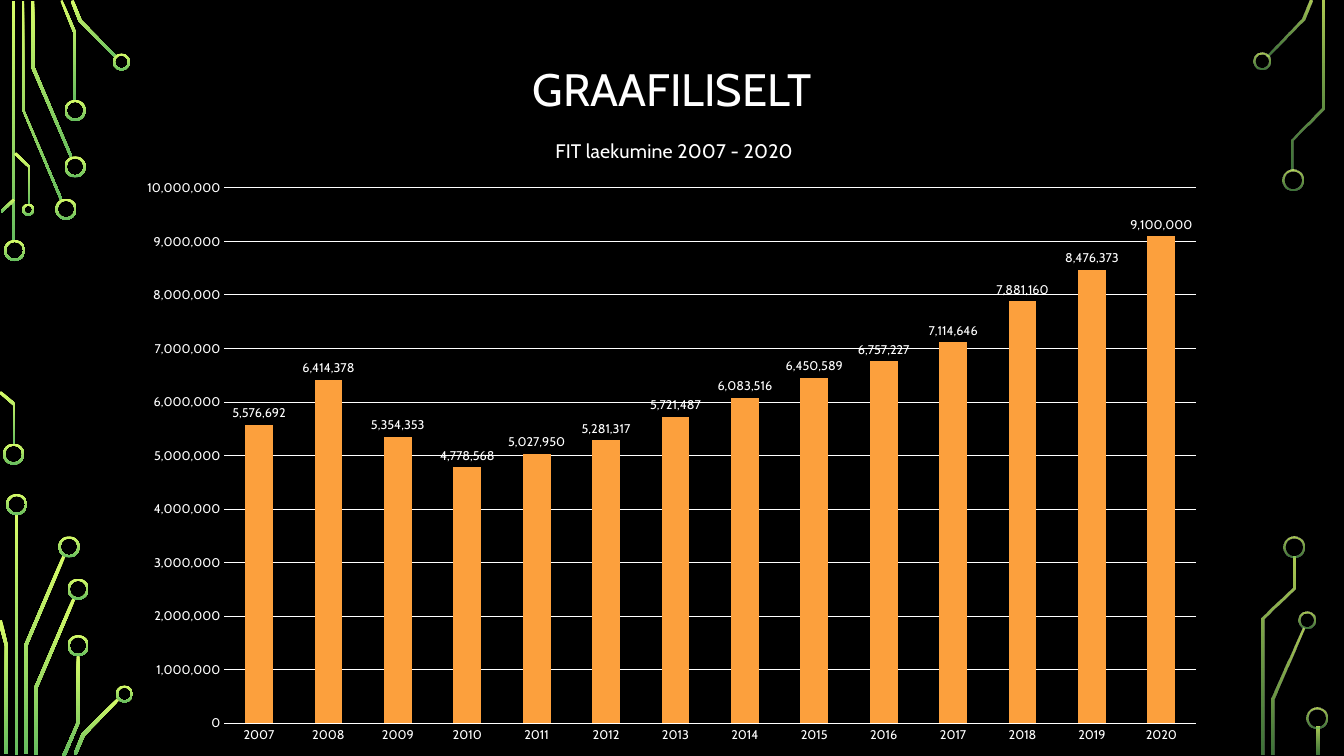
"""Build the slide with a yearly revenue column chart framed by circuit traces."""
from dataclasses import dataclass
from typing import Any

from lxml import etree
from pptx import Presentation
from pptx.chart import data as chart_data
from pptx.dml.color import RGBColor
from pptx.enum import chart as chart_enum, shapes, text
from pptx.oxml import ns
from pptx.util import Inches, Pt

BLACK = RGBColor(0x00, 0x00, 0x00)
WHITE = RGBColor(0xFF, 0xFF, 0xFF)
ORANGE = RGBColor(0xFC, 0xA0, 0x3D)
LIME = RGBColor(0xD8, 0xFC, 0x68)
GREEN = RGBColor(0x66, 0xBD, 0x5F)
FONT = "Cabin"
SOLID = (100, 100)
FADED = (80, 60)
RING_THICKNESS = 0.02
YEARS = [str(year) for year in range(2007, 2021)]
REVENUE = [5576692, 6414378, 5354353, 4778568, 5027950, 5281317, 5721487,
           6083516, 6450589, 6757227, 7114646, 7881160, 8476373, 9100000]


@dataclass(frozen=True)
class Ring:
    left: float
    top: float
    size: float = 0.21
    opacity: tuple[int, int] = SOLID


@dataclass(frozen=True)
class Bar:
    left: float
    top: float
    height: float
    opacity: tuple[int, int] = SOLID
    width: float = 0.03


@dataclass(frozen=True)
class Trace:
    outline: tuple[tuple[float, float], ...]
    opacity: tuple[int, int] = SOLID


RINGS = [
    Ring(0.04, 2.38), Ring(0.03, 4.4), Ring(0.55, 1.97), Ring(0.64, 1.55),
    Ring(0.64, 0.99), Ring(1.12, 0.53, 0.17), Ring(0.22, 2.02, 0.12),
    Ring(0.06, 4.9), Ring(0.58, 5.32), Ring(0.67, 5.74), Ring(0.67, 6.3),
    Ring(1.15, 6.8, 0.17),
    Ring(12.43, 0.52, 0.17, FADED), Ring(12.72, 1.68, opacity=FADED),
    Ring(12.88, 6.07, 0.17, FADED), Ring(12.73, 5.32, opacity=FADED),
    Ring(12.96, 7.02, opacity=FADED),
]
BARS = [Bar(0.12, 0.01, 2.39), Bar(0.15, 5.1, 2.39), Bar(13.06, 7.21, 0.28, FADED)]
TRACES = [
    Trace(((0.6, 1.99), (0.22, 1.09), (0.22, 0.01), (0.24, 0.01), (0.24, 1.09), (0.62, 1.98))),
    Trace(((0.7, 1.57), (0.31, 0.67), (0.31, 0.01), (0.34, 0.01), (0.34, 0.66), (0.72, 1.56))),
    Trace(((0.76, 1), (0.73, 1), (0.73, 0.33), (0.6, 0.01), (0.62, 0), (0.76, 0.33))),
    Trace(((1.15, 0.58), (0.78, 0.21), (0.7, 0.01), (0.73, 0), (0.81, 0.2), (1.16, 0.56))),
    Trace(((0.02, 2.11), (0.01, 2.09), (0.13, 1.97), (0.15, 1.99))),
    Trace(((0.15, 4.41), (0.13, 4.41), (0.13, 4.02), (-0.01, 3.9), (0.01, 3.88), (0.15, 4))),
    Trace(((0.3, 2.03), (0.28, 2.03), (0.28, 1.66), (0.14, 1.53), (0.16, 1.51), (0.3, 1.65))),
    Trace(((0.27, 7.48), (0.24, 7.48), (0.24, 6.4), (0.62, 5.51), (0.65, 5.52), (0.27, 6.41))),
    Trace(((0.08, 7.48), (0.05, 7.48), (0.05, 6.41), (-0.02, 6.16), (0.02, 6.15), (0.08, 6.41))),
    Trace(((0.37, 7.49), (0.34, 7.49), (0.34, 6.82), (0.72, 5.93), (0.75, 5.94), (0.37, 6.83))),
    Trace(((0.65, 7.5), (0.62, 7.49), (0.76, 7.17), (0.76, 6.5), (0.79, 6.5), (0.79, 7.17))),
    Trace(((0.76, 7.49), (0.73, 7.48), (0.81, 7.28), (1.17, 6.92), (1.19, 6.94), (0.84, 7.3))),
    Trace(((12.58, 0.56), (12.56, 0.55), (12.91, 0.19), (12.99, 0), (13.02, 0.01),
           (12.94, 0.2)), FADED),
    Trace(((12.64, 7.49), (12.61, 7.49), (12.61, 6.93), (12.92, 6.23), (12.94, 6.24),
           (12.64, 6.94)), FADED),
    Trace(((12.83, 1.69), (12.81, 1.69), (12.81, 1.38), (13.11, 1.07), (13.11, 0.01),
           (13.14, 0.01), (13.14, 1.08), (12.83, 1.39)), FADED),
    Trace(((12.54, 7.49), (12.51, 7.49), (12.51, 6.13), (12.82, 5.83), (12.82, 5.52),
           (12.85, 5.52), (12.85, 5.84), (12.54, 6.14)), FADED),
]


def apply_format(target: Any, values: dict[str, Any]) -> None:
    """Set every attribute named in values on the target."""
    for name, value in values.items():
        setattr(target, name, value)


def format_font(font: Any, size: float) -> None:
    """Give a font the slide's typeface and white colour."""
    apply_format(font, {"name": FONT, "size": Pt(size), "bold": False})
    font.color.rgb = WHITE


def paint_circuit(part: Any, opacity: tuple[int, int]) -> None:
    """Fill a circuit part with the lime to green gradient."""
    part.shadow.inherit = False
    part.line.fill.background()
    part.fill.gradient()
    part.fill.gradient_angle = 270
    for stop, color in zip(part.fill.gradient_stops, (LIME, GREEN)):
        stop.color.rgb = color
    for color, percent in zip(part.element.iter(ns.qn("a:srgbClr")), opacity):
        if percent < 100:
            etree.SubElement(color, ns.qn("a:alpha"), val=str(percent * 1000))


def draw_ring(slide: Any, ring: Ring) -> None:
    """Draw a solder ring."""
    part = slide.shapes.add_shape(shapes.MSO_SHAPE.DONUT, Inches(ring.left), Inches(ring.top),
                                  Inches(ring.size), Inches(ring.size))
    part.adjustments[0] = RING_THICKNESS / ring.size
    paint_circuit(part, ring.opacity)


def draw_bar(slide: Any, bar: Bar) -> None:
    """Draw a straight vertical trace."""
    part = slide.shapes.add_shape(shapes.MSO_SHAPE.RECTANGLE, Inches(bar.left), Inches(bar.top),
                                  Inches(bar.width), Inches(bar.height))
    paint_circuit(part, bar.opacity)


def draw_trace(slide: Any, trace: Trace) -> None:
    """Draw a bent trace from its outline."""
    start, *rest = [(Inches(x), Inches(y)) for x, y in trace.outline]
    builder = slide.shapes.build_freeform(*start)
    builder.add_line_segments(rest, close=True)
    paint_circuit(builder.convert_to_shape(), trace.opacity)


def place(parent: Any, index: int, values: dict[str, Any]) -> None:
    """Fix the position of a chart part as fractions of the chart."""
    layout = parent.find(ns.qn("c:layout"))
    if layout is None:
        layout = etree.Element(ns.qn("c:layout"))
        parent.insert(index, layout)
    manual = etree.SubElement(layout, ns.qn("c:manualLayout"))
    for name, value in values.items():
        etree.SubElement(manual, ns.qn(f"c:{name}"), val=str(value))


def draw_heading(slide: Any) -> None:
    """Add the slide heading."""
    heading = slide.shapes.add_textbox(Inches(1.25), Inches(0.68), Inches(10.83), Inches(0.47))
    apply_format(heading.text_frame, {"word_wrap": True,
                                      "vertical_anchor": text.MSO_ANCHOR.MIDDLE})
    line = heading.text_frame.paragraphs[0]
    apply_format(line, {"text": "GRAAFILISELT", "alignment": text.PP_ALIGN.CENTER,
                        "line_spacing": 0.9})
    format_font(line.runs[0].font, 32.4)


def draw_revenue_chart(slide: Any) -> None:
    """Add the column chart of yearly revenue."""
    table = chart_data.CategoryChartData(number_format="#,##0")
    table.categories = YEARS
    table.add_series("Series 1", REVENUE)
    chart = slide.shapes.add_chart(chart_enum.XL_CHART_TYPE.COLUMN_CLUSTERED, Inches(1.25),
                                   Inches(1.14), Inches(10.83), Inches(6.36), table).chart
    apply_format(chart, {"has_legend": False, "has_title": True})
    format_font(chart.font, 10)

    caption = chart.chart_title.text_frame
    caption.text = "FIT laekumine 2007 - 2020"
    format_font(caption.paragraphs[0].runs[0].font, 14)
    place(chart.chart_title.element if hasattr(chart.chart_title, "element")
          else chart.element.find(".//" + ns.qn("c:title")), 1,
          {"xMode": "edge", "yMode": "edge", "x": 0.39, "y": 0.03})
    place(chart.element.find(".//" + ns.qn("c:plotArea")), 0,
          {"layoutTarget": "inner", "xMode": "edge", "yMode": "edge",
           "x": 0.09, "y": 0.114, "w": 0.89, "h": 0.835})

    apply_format(chart.value_axis, {"minimum_scale": 0, "maximum_scale": 10_000_000,
                                    "major_unit": 1_000_000, "has_major_gridlines": True})
    apply_format(chart.value_axis.tick_labels, {"number_format": "#,##0",
                                                "number_format_is_linked": False})
    for axis in (chart.category_axis, chart.value_axis):
        apply_format(axis, {"major_tick_mark": chart_enum.XL_TICK_MARK.NONE,
                            "minor_tick_mark": chart_enum.XL_TICK_MARK.NONE})
        axis.format.line.fill.background()
        format_font(axis.tick_labels.font, 9)
    gridline = chart.value_axis.major_gridlines.format.line
    gridline.width = Pt(0.75)
    gridline.color.rgb = WHITE

    plot = chart.plots[0]
    apply_format(plot, {"gap_width": 150, "vary_by_categories": False, "has_data_labels": True})
    apply_format(plot.data_labels, {"show_value": True, "number_format": "#,##0",
                                    "number_format_is_linked": False,
                                    "position": chart_enum.XL_LABEL_POSITION.OUTSIDE_END})
    format_font(plot.data_labels.font, 9)
    columns = plot.series[0].format.fill
    columns.solid()
    columns.fore_color.rgb = ORANGE


def main() -> None:
    """Build and save the presentation."""
    deck = Presentation()
    apply_format(deck, {"slide_width": Inches(13.33), "slide_height": Inches(7.5)})
    slide = deck.slides.add_slide(deck.slide_layouts[6])
    slide.background.fill.solid()
    slide.background.fill.fore_color.rgb = BLACK
    for bar in BARS:
        draw_bar(slide, bar)
    for trace in TRACES:
        draw_trace(slide, trace)
    for ring in RINGS:
        draw_ring(slide, ring)
    draw_heading(slide)
    draw_revenue_chart(slide)
    deck.save("out.pptx")


if __name__ == "__main__":
    main()
